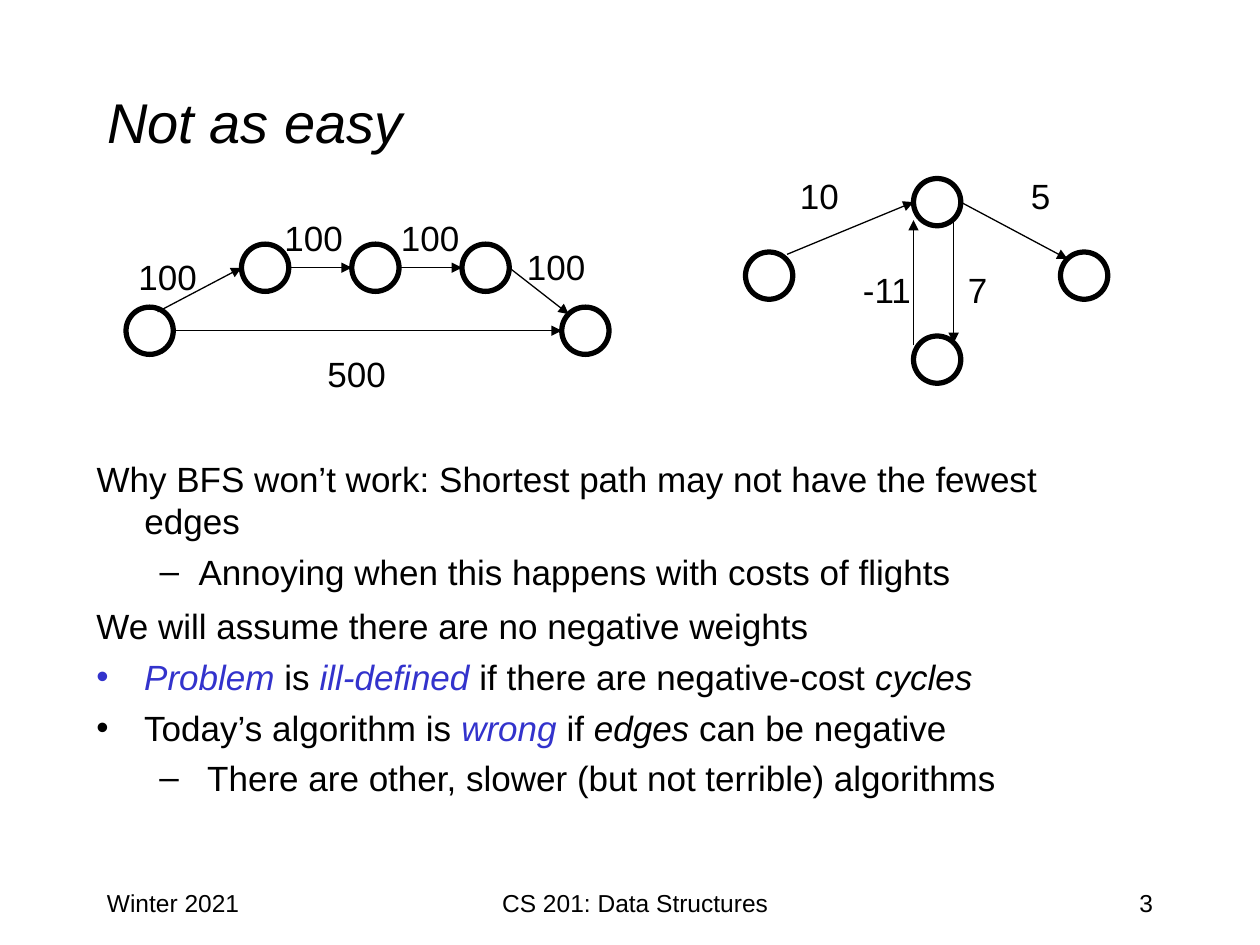
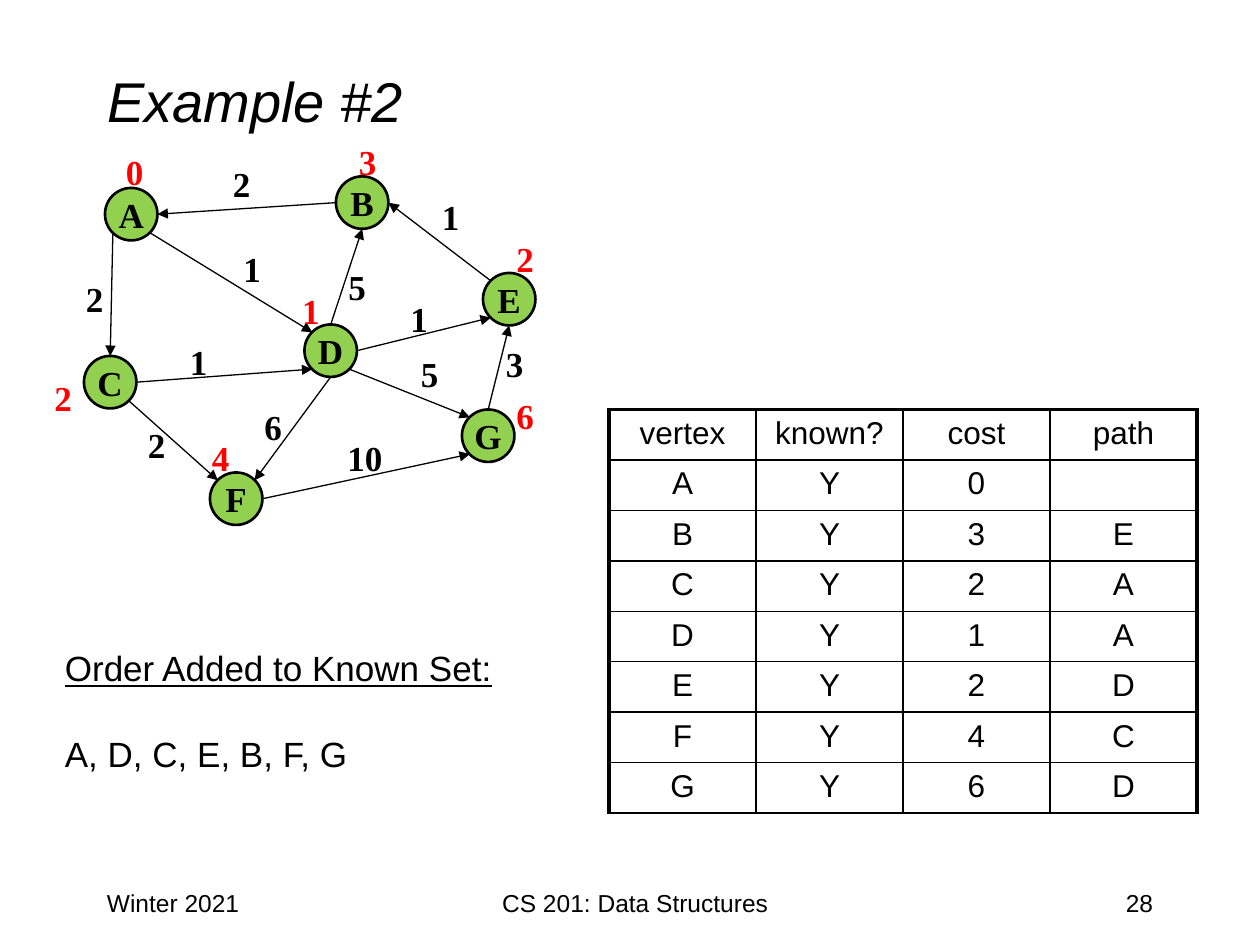
from dataclasses import dataclass

from lxml import etree
from pptx import Presentation
from pptx.dml.color import RGBColor
from pptx.enum.shapes import MSO_CONNECTOR, MSO_SHAPE
from pptx.enum.text import MSO_ANCHOR, PP_ALIGN
from pptx.oxml.ns import qn
from pptx.util import Inches, Pt

LEFT, CENTER, RIGHT = PP_ALIGN.LEFT, PP_ALIGN.CENTER, PP_ALIGN.RIGHT
TOP, MIDDLE = MSO_ANCHOR.TOP, MSO_ANCHOR.MIDDLE
ELLIPSE, STRAIGHT = MSO_SHAPE.OVAL, MSO_CONNECTOR.STRAIGHT


@dataclass(frozen=True)
class Theme:
    sans: str = "Arial"
    serif: str = "Times New Roman"
    ink: str = "000000"
    accent: str = "3333CC"
    cost: str = "FF0000"
    node: str = "92D050"
    title: int = 32
    body: int = 20
    cell: int = 18
    footer: int = 14
    edge: float = 0.75
    grid: float = 1
    frame: float = 2.25


T = Theme()
COLS, ROWS = 120, 90  # slide grid
WIDTH, HEIGHT = Inches(10), Inches(7.5)

# Points on a node where edges meet it, as shares of its box
PORTS = {"n": (0.5, 0), "ne": (0.85, 0.15), "e": (1, 0.5), "se": (0.85, 0.85),
         "s": (0.5, 1), "sw": (0.15, 0.85), "w": (0, 0.5), "nw": (0.15, 0.15)}

EMPHASIS = {"italic": True, "color": T.accent}
ITALIC = {"italic": True}


@dataclass(frozen=True)
class GraphStyle:
    size: float
    line: float
    font: str
    bold: bool
    fill: str = ""


PLAIN = GraphStyle(4.5, 3, T.sans, False)
LETTERED = GraphStyle(5, 1.5, T.serif, True, T.node)


def emu(x, y):
    return round(x * WIDTH / COLS), round(y * HEIGHT / ROWS)


def place(sp, box):
    sp.left, sp.top = emu(*box[:2])
    sp.width, sp.height = emu(*box[2:])


def write(p, text, size=T.body, font=T.sans, color=T.ink, bold=False,
          italic=False, underline=False, align=LEFT, before=0):
    p.alignment = align
    p.space_before = Pt(before)
    r = p.add_run()
    r.text = text
    f = r.font
    f.size, f.name, f.bold, f.italic = Pt(size), font, bold, italic
    f.underline = underline
    f.color.rgb = RGBColor.from_string(color)


def text_box(slide, box, text, wrap=True, **fmt):
    sp = slide.shapes.add_textbox(*emu(*box[:2]), *emu(*box[2:]))
    sp.text_frame.word_wrap = wrap
    write(sp.text_frame.paragraphs[0], text, **fmt)
    return sp.text_frame


def set_bullet(p, mark, margin, hang):
    pPr = p._p.get_or_add_pPr()
    pPr.set("marL", str(Inches(margin)))
    pPr.set("indent", str(-Inches(hang)))
    if mark:
        etree.SubElement(pPr, qn("a:buFont"), typeface=T.sans)
        etree.SubElement(pPr, qn("a:buChar"), char=mark)
    else:
        etree.SubElement(pPr, qn("a:buNone"))


def write_list(tf, items):
    """Each item: bullet mark, margin, hanging indent, runs."""
    tf.word_wrap = True
    for i, (mark, margin, hang, runs) in enumerate(items):
        p = tf.paragraphs[0] if i == 0 else tf.add_paragraph()
        p.level = int(mark == "–")
        for text, fmt in runs:
            write(p, text, before=5, **fmt)
        set_bullet(p, mark, margin, hang)


# Title and footer shared by the slides
def new_slide(prs, layout, title, title_top, number):
    slide = prs.slides.add_slide(prs.slide_layouts[layout])
    place(slide.shapes.title, (9, title_top, 102, 15))
    tf = slide.shapes.title.text_frame
    tf.vertical_anchor = MIDDLE
    write(tf.paragraphs[0], title, size=T.title, italic=True)
    for x, w, text, align in ((9, 25, "Winter 2021", LEFT),
                              (86, 25, number, RIGHT),
                              (38, 45, "CS 201: Data Structures", CENTER)):
        text_box(slide, (x, 84, w, 6), text, size=T.footer, align=align)
    return slide


# Graph parts
def add_node(slide, x, y, name, style):
    sp = slide.shapes.add_shape(ELLIPSE, *emu(x, y), *emu(style.size, style.size))
    sp.shadow.inherit = False
    sp.line.color.rgb = RGBColor.from_string(T.ink)
    sp.line.width = Pt(style.line)
    if not style.fill:
        sp.fill.background()
        return
    sp.fill.solid()
    sp.fill.fore_color.rgb = RGBColor.from_string(style.fill)
    tf = sp.text_frame
    tf.word_wrap = False
    tf.vertical_anchor = MIDDLE
    write(tf.paragraphs[0], name, font=style.font, bold=style.bold, align=CENTER)


def add_arrow(slide, start, end):
    cx = slide.shapes.add_connector(STRAIGHT, *emu(*start), *emu(*end))
    cx.line.color.rgb = RGBColor.from_string(T.ink)
    cx.line.width = Pt(T.edge)
    etree.SubElement(cx.line._get_or_add_ln(), qn("a:tailEnd"), type="triangle")
    etree.SubElement(cx._element.spPr, qn("a:effectLst"))


def add_graph(slide, box, nodes, edges, style, costs=()):
    """Edge: from, port, to, port, weight, weight's position in the box."""
    left, top = box[:2]

    def port(name, side):
        dx, dy = PORTS.get(side, side)
        x, y = nodes[name]
        return left + x + dx * style.size, top + y + dy * style.size

    def label(text, x, y, color):
        digit = 1.85 if style.font == T.sans else 1.65
        text_box(slide, (left + x, top + y, 2.4 + digit * len(text), 5.25), text,
                 wrap=False, font=style.font, bold=style.bold, color=color)

    for name, (x, y) in nodes.items():
        add_node(slide, left + x, top + y, name, style)
    for a, a_side, b, b_side, weight, x, y in edges:
        add_arrow(slide, port(a, a_side), port(b, b_side))
        label(weight, x, y, T.ink)
    for cost, x, y in costs:
        label(cost, x, y, T.cost)


# Table with a heavy outer frame
def set_borders(cell, widths):
    tcPr = cell._tc.get_or_add_tcPr()
    for side, width in zip("LRTB", widths):
        ln = etree.SubElement(tcPr, qn(f"a:ln{side}"), w=str(Pt(width)))
        fill = etree.SubElement(ln, qn("a:solidFill"))
        etree.SubElement(fill, qn("a:srgbClr"), val=T.ink)


def add_cost_table(slide, box, rows):
    n_rows, n_cols = len(rows), len(rows[0])
    frame = slide.shapes.add_table(n_rows, n_cols, *emu(*box[:2]), *emu(*box[2:]))
    table = frame.table
    table.first_row = table.horz_banding = False
    for i, row in enumerate(rows):
        for j, text in enumerate(row):
            cell = table.cell(i, j)
            outer = (j == 0, j == n_cols - 1, i == 0, False)
            set_borders(cell, [T.frame if o else T.grid for o in outer])
            cell.fill.background()
            cell.vertical_anchor = TOP
            if text:
                write(cell.text_frame.paragraphs[0], text, size=T.cell, align=CENTER)


def weights_slide(prs):
    slide = new_slide(prs, 1, "Not as easy", 4, "3")

    # Path with more edges but lower cost
    add_graph(slide, (12, 20, 46, 18),
              {"start": (0, 9.25), "a": (11, 3.25), "b": (21.5, 3.25),
               "c": (32, 3.25), "end": (41.5, 9.25)},
              [("start", "e", "end", "w", "500", 18, 13),
               ("start", (0.67, 0.1), "a", "w", "100", 0, 3.75),
               ("a", "e", "b", "w", "100", 13.9, 0),
               ("b", "e", "c", "w", "100", 25, 0),
               ("c", "e", "end", "nw", "100", 37, 2.75)], PLAIN)

    # Negative cycle
    add_graph(slide, (71, 16, 35, 21),
              {"left": (0, 8), "top": (16, 1), "right": (30, 8), "bottom": (16, 16)},
              [("left", (0.88, 0.05), "top", "w", "10", 4, 0),
               ("top", "e", "right", "nw", "5", 26, 0),
               ("top", "se", "bottom", "ne", "7", 20, 9),
               ("bottom", (0, 0.2), "top", (0, 0.88), "-11", 10, 9)], PLAIN)

    # Remarks
    body = slide.placeholders[1]
    place(body, (8, 43, 102, 11))
    write_list(body.text_frame, [
        ("", 0.38, 0.38, [("Why BFS won’t work: Shortest path may not have "
                           "the fewest edges", {})]),
        ("–", 0.81, 0.31, [("Annoying when this happens with costs of flights", {})]),
    ])
    sp = slide.shapes.add_textbox(*emu(8, 57), *emu(102, 21))
    write_list(sp.text_frame, [
        ("", 0.38, 0.38, [("We will assume there are no negative weights", {})]),
        ("•", 0.38, 0.38, [("Problem", EMPHASIS), (" is ", {}),
                           ("ill-defined", EMPHASIS),
                           (" if there are negative-cost ", {}), ("cycles", ITALIC)]),
        ("•", 0.38, 0.38, [("Today’s algorithm is ", {}), ("wrong", EMPHASIS),
                           (" if ", {}), ("edges", ITALIC), (" can be negative", {})]),
        ("–", 0.88, 0.38, [("There are other, slower (but not terrible) "
                            "algorithms", {})]),
    ])


def example_slide(prs):
    slide = new_slide(prs, 5, "Example #2", 2, "28")

    # Weighted graph with final costs
    add_graph(slide, (4, 12, 50, 39),
              {"A": (6, 5.9), "B": (28, 4.8), "C": (4, 21.9), "D": (25, 18.9),
               "E": (42, 14), "F": (16, 33), "G": (40, 27)},
              [("A", "sw", "C", "n", "2", 3, 13.8),
               ("B", "w", "A", "e", "2", 17, 2.9),
               ("D", "n", "B", "s", "5", 28, 12.7),
               ("A", "se", "D", "nw", "1", 18, 11),
               ("C", "e", "D", "sw", "1", 12.9, 19.8),
               ("D", "e", "E", "sw", "1", 33.9, 15.7),
               ("E", "nw", "B", "e", "1", 36.9, 6),
               ("C", "se", "F", "nw", "2", 8.9, 27.7),
               ("D", "s", "F", "ne", "6", 20, 26),
               ("D", "se", "G", "nw", "5", 34.9, 21),
               ("G", "n", "E", "s", "3", 43, 20),
               ("F", "e", "G", "sw", "10", 27.9, 29)],
              LETTERED,
              [("0", 6.8, 1.7), ("3", 29, 0.75), ("4", 15, 29), ("2", 0, 23.3),
               ("1", 23.6, 15), ("2", 44, 10), ("6", 44, 25)])

    # Results
    add_cost_table(slide, (58, 39, 56, 38.4), [
        ("vertex", "known?", "cost", "path"),
        ("A", "Y", "0", ""), ("B", "Y", "3", "E"), ("C", "Y", "2", "A"),
        ("D", "Y", "1", "A"), ("E", "Y", "2", "D"), ("F", "Y", "4", "C"),
        ("G", "Y", "6", "D")])
    tf = text_box(slide, (5, 61, 43.3, 13.3), "Order Added to Known Set:",
                  underline=True)
    write(tf.add_paragraph(), "A, D, C, E, B, F, G", before=25)


def main():
    prs = Presentation()
    prs.slide_width, prs.slide_height = WIDTH, HEIGHT
    weights_slide(prs)
    example_slide(prs)
    prs.save("out.pptx")


if __name__ == "__main__":
    main()
